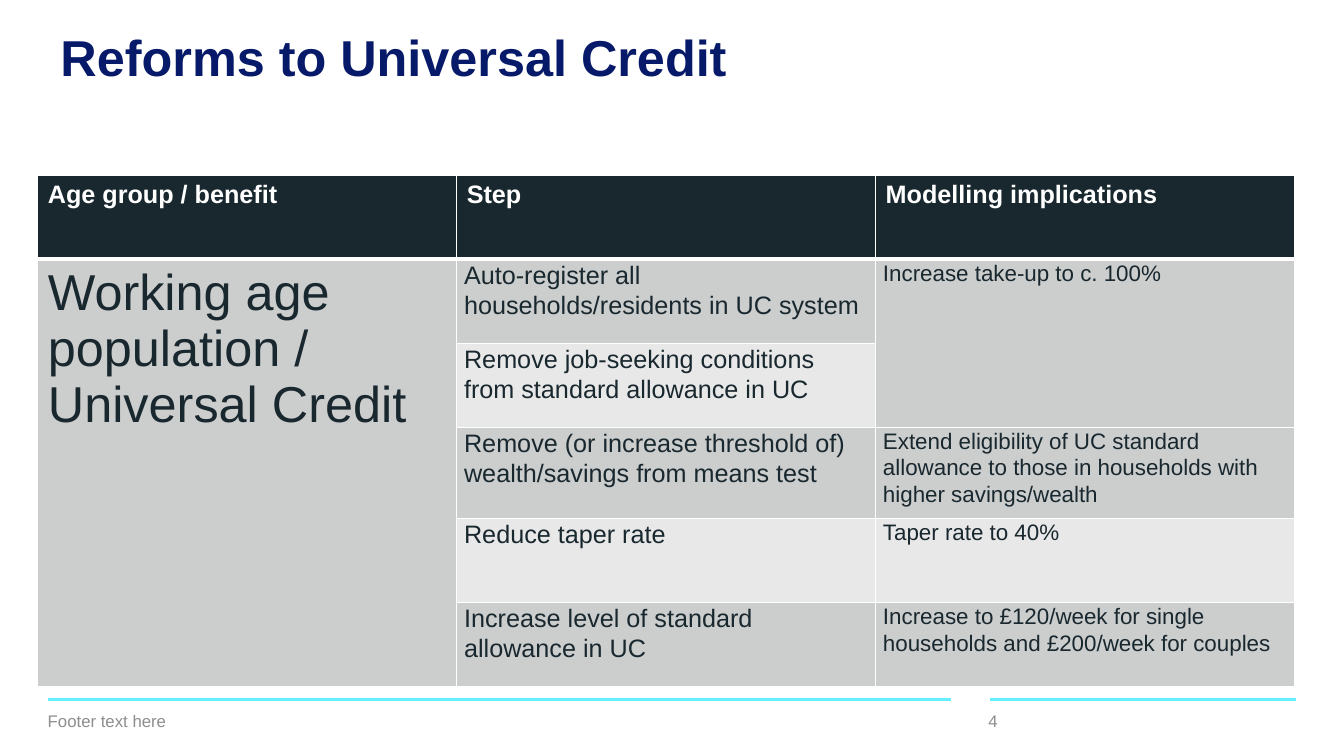
from lxml import etree
from pptx import Presentation
from pptx.dml.color import RGBColor
from pptx.enum.shapes import MSO_CONNECTOR as CONNECTOR
from pptx.enum.text import MSO_ANCHOR as ANCHOR, PP_ALIGN as ALIGN
from pptx.oxml.ns import qn
from pptx.util import Emu, Pt

EMU_PER_PX = 9525
FONT = "Arial"
COLORS = {
    "title": "071A69",
    "dark": "19282F",
    "white": "FFFFFF",
    "band": "CCCDCD",
    "light": "E8E8E8",
    "rule": "64F0FF",
    "footer": "8C8E8F",
}
HEADERS = ["Age group / benefit", "Step", "Modelling implications"]
GROUP = ["Working age population /", "Universal Credit"]
REFORMS = [
    ("Auto-register all households/residents in UC system",
     "Increase take-up to c. 100%"),
    ("Remove job-seeking conditions from standard allowance in UC", None),
    ("Remove (or increase threshold of) wealth/savings from means test",
     "Extend eligibility of UC standard allowance to those in households "
     "with higher savings/wealth"),
    ("Reduce taper rate", "Taper rate to 40%"),
    ("Increase level of standard allowance in UC",
     "Increase to £120/week for single households and £200/week for couples"),
]
COLUMN_WIDTH = 399
ROW_HEIGHTS = [80, 80, 80, 87, 80, 80]


def px(n):
    return Emu(n * EMU_PER_PX)


def rgb(name):
    return RGBColor.from_string(COLORS[name])


def add_run(p, text, size, color, bold=False):
    r = p.add_run()
    r.text = text
    r.font.name = FONT
    r.font.size = Pt(size)
    r.font.bold = bold
    r.font.color.rgb = rgb(color)


def add_title(s, text):
    sp = s.shapes.title
    sp.left, sp.top, sp.width, sp.height = px(48), px(27), px(854), px(139)
    tf = sp.text_frame
    tf.word_wrap = True
    tf.vertical_anchor = ANCHOR.TOP
    p = tf.paragraphs[0]
    p.alignment = ALIGN.LEFT
    p.line_spacing = 0.9
    add_run(p, text, 36, "title", bold=True)


def add_rule(s, left, right):
    y = px(666)
    line = s.shapes.add_connector(CONNECTOR.STRAIGHT, px(left), y, px(right), y)
    line.line.color.rgb = rgb("rule")
    line.line.width = Pt(2.25)
    etree.SubElement(line._element.spPr, qn("a:effectLst"))


def add_footer(s, left, width, text):
    tf = s.shapes.add_textbox(px(left), px(667), px(width), px(38)).text_frame
    tf.word_wrap = True
    tf.vertical_anchor = ANCHOR.MIDDLE
    add_run(tf.paragraphs[0], text, 12, "footer")


def style_cell(cell, fill, bottom=1):
    """Set white borders and a fill; borders come first in the cell XML."""
    tc_pr = cell._tc.get_or_add_tcPr()
    for side, width in (("L", 1), ("R", 1), ("T", 1), ("B", bottom)):
        ln = etree.SubElement(tc_pr, qn(f"a:ln{side}"), w=str(Pt(width)))
        solid = etree.SubElement(ln, qn("a:solidFill"))
        etree.SubElement(solid, qn("a:srgbClr"), val=COLORS["white"])
    cell.fill.solid()
    cell.fill.fore_color.rgb = rgb(fill)


def fill_detail(cell, text, size):
    cell.margin_left = cell.margin_right = px(7)
    cell.margin_top = cell.margin_bottom = 0
    p = cell.text_frame.paragraphs[0]
    p.line_spacing = 1.07
    p.space_after = Pt(8)
    add_run(p, text, size, "dark")


def add_reform_table(s):
    frame = s.shapes.add_table(
        len(ROW_HEIGHTS), len(HEADERS), px(36), px(167),
        px(COLUMN_WIDTH * len(HEADERS)), px(sum(ROW_HEIGHTS)))
    table = frame.table
    table.horz_banding = False
    for column in table.columns:
        column.width = px(COLUMN_WIDTH)
    for row, height in zip(table.rows, ROW_HEIGHTS):
        row.height = px(height)

    for col, header in enumerate(HEADERS):
        cell = table.cell(0, col)
        style_cell(cell, "dark", bottom=3)
        add_run(cell.text_frame.paragraphs[0], header, 18, "white", bold=True)

    for row, (step, implication) in enumerate(REFORMS, start=1):
        banding = "band" if row % 2 else "light"
        style_cell(table.cell(row, 0), "band")
        style_cell(table.cell(row, 1), banding)
        style_cell(table.cell(row, 2), banding if implication else "band")
        fill_detail(table.cell(row, 1), step, 18)
        if implication:
            fill_detail(table.cell(row, 2), implication, 16)
        else:
            table.cell(row - 1, 2).merge(table.cell(row, 2))

    group = table.cell(1, 0)
    group.merge(table.cell(len(REFORMS), 0))
    tf = group.text_frame
    for i, text in enumerate(GROUP):
        p = tf.add_paragraph() if i else tf.paragraphs[0]
        add_run(p, text, 36, "dark")


def main():
    prs = Presentation()
    prs.slide_width, prs.slide_height = px(1280), px(720)
    s = prs.slides.add_slide(prs.slide_layouts[5])
    add_rule(s, 46, 906)
    add_rule(s, 943, 1234)
    add_title(s, "Reforms to Universal Credit")
    add_reform_table(s)
    add_footer(s, 36, 800, "Footer text here")
    add_footer(s, 932, 114, "4")
    prs.save("out.pptx")


if __name__ == "__main__":
    main()
